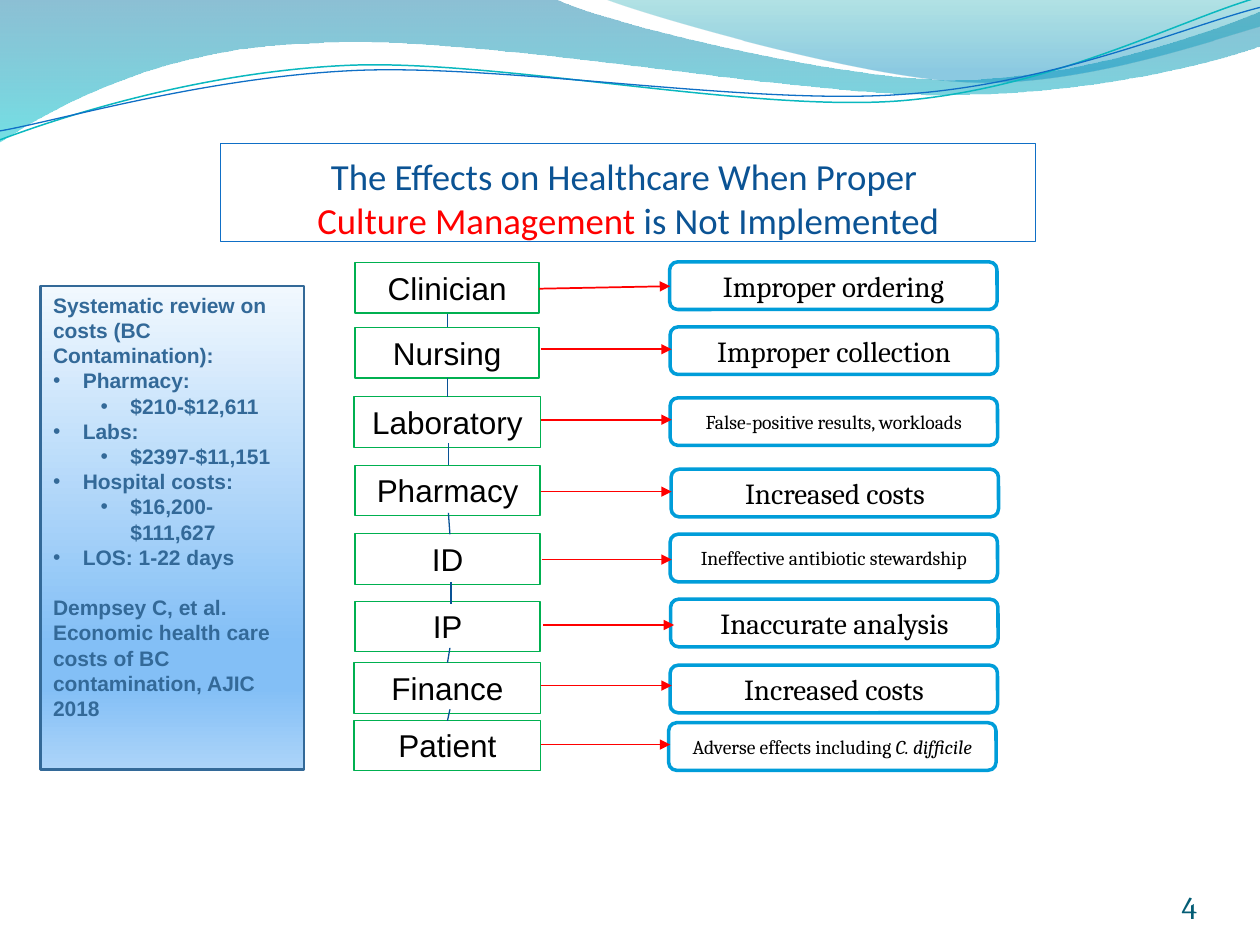
from lxml.etree import SubElement
from pptx import Presentation
from pptx.dml.color import RGBColor
from pptx.enum.shapes import MSO_CONNECTOR as LINK, MSO_SHAPE as SHAPE
from pptx.enum.text import MSO_ANCHOR as ANCHOR, PP_ALIGN as ALIGN
from pptx.oxml.ns import qn
from pptx.util import Cm, Pt

THEME = {
    "title": "0B5394", "alert": "FF0000", "frame": "0F6FC6", "ink": "000000",
    "role": "00B050", "effect": "009DD9", "white": "FFFFFF", "link": "095295",
    "review": "336998", "number": "045D75", "teal": "0AB8BF",
    "title_pt": 21, "role_pt": 18, "big_pt": 16.6, "small_pt": 11.2,
    "review_pt": 12, "number_pt": 18,
    "head": "Calibri", "sans": "Arial", "serif": "Cambria",
}

TITLE = [[("The Effects on Healthcare When Proper ", "title")],
         [("Culture Management ", "alert"), ("is Not Implemented", "title")]]

# role, (left, top, width), effect (left, top), effect size, effect runs (text, italic)
ROWS = [
    ("Clinician", (7.16, 5.29, 3.71), (13.5, 5.28), "big_pt", [("Improper ordering", False)]),
    ("Nursing", (7.16, 6.6, 3.71), (13.51, 6.59), "big_pt", [("Improper collection", False)]),
    ("Laboratory", (7.14, 8, 3.76), (13.51, 8.02), "small_pt",
     [("False-positive results, workloads", False)]),
    ("Pharmacy", (7.16, 9.38, 3.73), (13.53, 9.46), "big_pt", [("Increased costs", False)]),
    ("ID", (7.16, 10.76, 3.73), (13.51, 10.77), "small_pt",
     [("Ineffective antibiotic stewardship", False)]),
    ("IP", (7.16, 12.12, 3.73), (13.52, 12.08), "big_pt", [("Inaccurate analysis", False)]),
    ("Finance", (7.14, 13.36, 3.76), (13.51, 13.41), "big_pt", [("Increased costs", False)]),
    ("Patient", (7.14, 14.52, 3.76), (13.48, 14.57), "small_pt",
     [("Adverse effects including ", False), ("C. difficile", True)]),
]
ROLE_H, EFFECT_W, EFFECT_H = 1.02, 6.6, 0.96

ROLE_LINKS = [
    (9.02, 6.32, 9.02, 6.6), (9.02, 7.62, 9.02, 8), (9.04, 8.94, 9.04, 9.37),
    (9.04, 10.34, 9.07, 10.77), (9.09, 11.73, 9.09, 12.17),
    (9.07, 13.06, 9.02, 13.36), (9.07, 14.3, 9.02, 14.53),
]
EFFECT_ARROWS = [
    (10.87, 5.82, 13.51, 5.77), (10.9, 7.04, 13.54, 7.04), (10.9, 8.46, 13.54, 8.46),
    (10.9, 9.91, 13.54, 9.91), (10.92, 11.28, 13.54, 11.28), (10.95, 12.6, 13.59, 12.6),
    (10.9, 13.82, 13.54, 13.82), (10.9, 15.01, 13.51, 15.01),
]

REVIEW = [
    ("Systematic review on costs (BC Contamination):", None),
    ("Pharmacy:", 0), ("$210-$12,611", 1),
    ("Labs:", 0), ("$2397-$11,151", 1),
    ("Hospital costs:", 0), ("$16,200-$111,627", 1),
    ("LOS: 1-22 days", 0),
    ("Dempsey C, et al. Economic health care costs of BC contamination, AJIC 2018", None),
]
REVIEW_FILL = [(0, "F1F8FE", 100), (74, "83BFF6", 100), (83, "83BFF6", 100), (100, "ACD4F9", 100)]
BULLET_HANG, BULLET_INDENT = 0.6, (0.6, 1.56)

BANDS = [
    ([(0, 0), (11.18, -0.03),
      (12.09, 0.43, 16.87, 1.6, 19.25, 1.6), (21.67, 1.6, 24.33, 0.66, 25.4, 0.23),
      (25.43, 0.91),
      (24.97, 1.12, 22.1, 1.93, 18.95, 1.91), (15.8, 1.91, 9.7, 0.71, 6.53, 0.86),
      (3.28, 0.91, 1.17, 2.11, -0.03, 2.87), (0, 0)],
     [(0, "0074A1", 45), (100, "00C6CF", 55)]),
    ([(12.17, -0.03),
      (12.93, 0.28, 17.32, 1.57, 19.53, 1.65), (21.74, 1.75, 24.41, 0.81, 25.4, 0.53),
      (25.4, 0), (12.17, -0.03)],
     [(0, "00A1A9", 30), (80, "008BBF", 45)]),
]
RIPPLES = [
    ([(-0.05, 2.22), (1.19, 1.82, 4.02, 1.04, 7.05, 1.05),
      (10.05, 1.07, 15.02, 2.37, 18.08, 2.29), (21.13, 2.2, 23.86, 0.91, 25.41, 0.55)],
     "teal", 0.85),
    ([(-0.04, 2.04), (1.16, 1.89, 4.17, 1.15, 7.2, 1.16),
      (10.25, 1.18, 15.13, 2.25, 18.19, 2.16), (21.21, 2.1, 23.93, 1.06, 25.45, 0.75)],
     "frame", 0.75),
]
RIPPLE_TURN = 357.3


def color(name):
    return RGBColor.from_string(THEME[name])


def stroke(line, name, width):
    line.color.rgb = color(name)
    line.width = Pt(width)


def gradient(s, stops):
    s.fill.background()
    old = s._element.spPr.find(qn("a:noFill"))
    grad = SubElement(s._element.spPr, qn("a:gradFill"), rotWithShape="1")
    gs_list = SubElement(grad, qn("a:gsLst"))
    for pos, rgb, opacity in stops:
        gs = SubElement(gs_list, qn("a:gs"), pos=str(pos * 1000))
        clr = SubElement(gs, qn("a:srgbClr"), val=rgb)
        if opacity < 100:
            SubElement(clr, qn("a:alpha"), val=str(opacity * 1000))
    SubElement(grad, qn("a:lin"), ang="5400000", scaled="0")
    s._element.spPr.replace(old, grad)


def add_wave(shapes, outline, close):
    pairs = [list(zip(seg[::2], seg[1::2])) for seg in outline]
    points = [(Cm(x), Cm(y)) for seg in pairs for x, y in seg]
    builder = shapes.build_freeform(*points[0])
    builder.add_line_segments(points[1:], close=close)
    s = builder.convert_to_shape()
    s.shadow.inherit = False
    track = next(s._element.iter(qn("a:path")))
    nodes = list(track.iter(qn("a:lnTo")))
    for seg in pairs[1:]:
        group, nodes = nodes[:len(seg)], nodes[len(seg):]
        if len(seg) == 3:
            curve = track.makeelement(qn("a:cubicBezTo"))
            group[0].addprevious(curve)
            for node in group:
                curve.append(node[0])
                track.remove(node)
    return s


def add_box(shapes, kind, x, y, w, h, line, width, anchor=ANCHOR.TOP):
    s = shapes.add_shape(kind, Cm(x), Cm(y), Cm(w), Cm(h))
    s.shadow.inherit = False
    s.fill.background()
    stroke(s.line, line, width)
    s.text_frame.word_wrap = True
    s.text_frame.vertical_anchor = anchor
    s.text_frame.paragraphs[0].alignment = ALIGN.CENTER
    return s


def add_run(p, text, font, size, name, bold=False, italic=False):
    r = p.add_run()
    r.text = text
    r.font.name = THEME[font]
    r.font.size = Pt(THEME[size])
    r.font.color.rgb = color(name)
    r.font.bold, r.font.italic = bold, italic


def add_link(shapes, ends, name, width, arrow=False):
    s = shapes.add_connector(LINK.STRAIGHT, *map(Cm, ends))
    stroke(s.line, name, width)
    if arrow:
        SubElement(s.line._get_or_add_ln(), qn("a:tailEnd"), type="triangle")
    SubElement(s._element.spPr, qn("a:effectLst"))


def add_title(shapes):
    s = add_box(shapes, SHAPE.RECTANGLE, 4.45, 2.89, 16.43, 1.98, "frame", 0.75, ANCHOR.BOTTOM)
    tf = s.text_frame
    tf.margin_left = tf.margin_right = tf.margin_bottom = 0
    p = tf.paragraphs[0]
    for i, runs in enumerate(TITLE):
        if i:
            p.add_line_break()
        for text, name in runs:
            add_run(p, text, "head", "title_pt", name)


def add_rows(shapes):
    for role, place, corner, size, runs in ROWS:
        s = add_box(shapes, SHAPE.RECTANGLE, *place, ROLE_H, "role", 0.75)
        add_run(s.text_frame.paragraphs[0], role, "sans", "role_pt", "ink")
        s = add_box(shapes, SHAPE.ROUNDED_RECTANGLE, *corner, EFFECT_W, EFFECT_H,
                    "effect", 2, ANCHOR.MIDDLE)
        s.fill.solid()
        s.fill.fore_color.rgb = color("white")
        for text, italic in runs:
            add_run(s.text_frame.paragraphs[0], text, "serif", size, "ink", italic=italic)
    for ends in ROLE_LINKS:
        add_link(shapes, ends, "link", 0.75)
    for ends in EFFECT_ARROWS:
        add_link(shapes, ends, "alert", 1, True)


def add_review(shapes):
    s = add_box(shapes, SHAPE.RECTANGLE, 0.82, 5.77, 5.31, 9.75, "review", 1.5)
    gradient(s, REVIEW_FILL)
    tf = s.text_frame
    for i, (text, level) in enumerate(REVIEW):
        p = tf.add_paragraph() if i else tf.paragraphs[0]
        p.alignment = ALIGN.LEFT
        if level is not None:
            p.level = level
            pPr = p._p.get_or_add_pPr()
            pPr.set("marL", str(Cm(BULLET_INDENT[level])))
            pPr.set("indent", str(-Cm(BULLET_HANG)))
            SubElement(pPr, qn("a:buFont"), typeface=THEME["sans"])
            SubElement(pPr, qn("a:buChar"), char="•")
        add_run(p, text, "sans", "review_pt", "review", bold=True)
    p.space_before = Pt(14.4)


def add_number(shapes):
    tf = shapes.add_textbox(Cm(22.02), Cm(17.65), Cm(2.11), Cm(1.02)).text_frame
    tf.word_wrap = True
    tf.vertical_anchor = ANCHOR.BOTTOM
    tf.margin_left = tf.margin_top = tf.margin_right = tf.margin_bottom = 0
    p = tf.paragraphs[0]
    p.alignment = ALIGN.RIGHT
    add_run(p, "4", "serif", "number_pt", "number")


def main():
    """Build the slide on healthcare effects of poor culture management."""
    prs = Presentation()
    prs.slide_width, prs.slide_height = Cm(25.4), Cm(19.05)
    shapes = prs.slides.add_slide(prs.slide_layouts[6]).shapes
    for outline, stops in BANDS:
        s = add_wave(shapes, outline, True)
        gradient(s, stops)
        s.line.fill.background()
    for outline, name, width in RIPPLES:
        s = add_wave(shapes, outline, False)
        s.rotation = RIPPLE_TURN
        s.fill.background()
        stroke(s.line, name, width)
    add_title(shapes)
    add_rows(shapes)
    add_review(shapes)
    add_number(shapes)
    prs.save("out.pptx")


if __name__ == "__main__":
    main()
